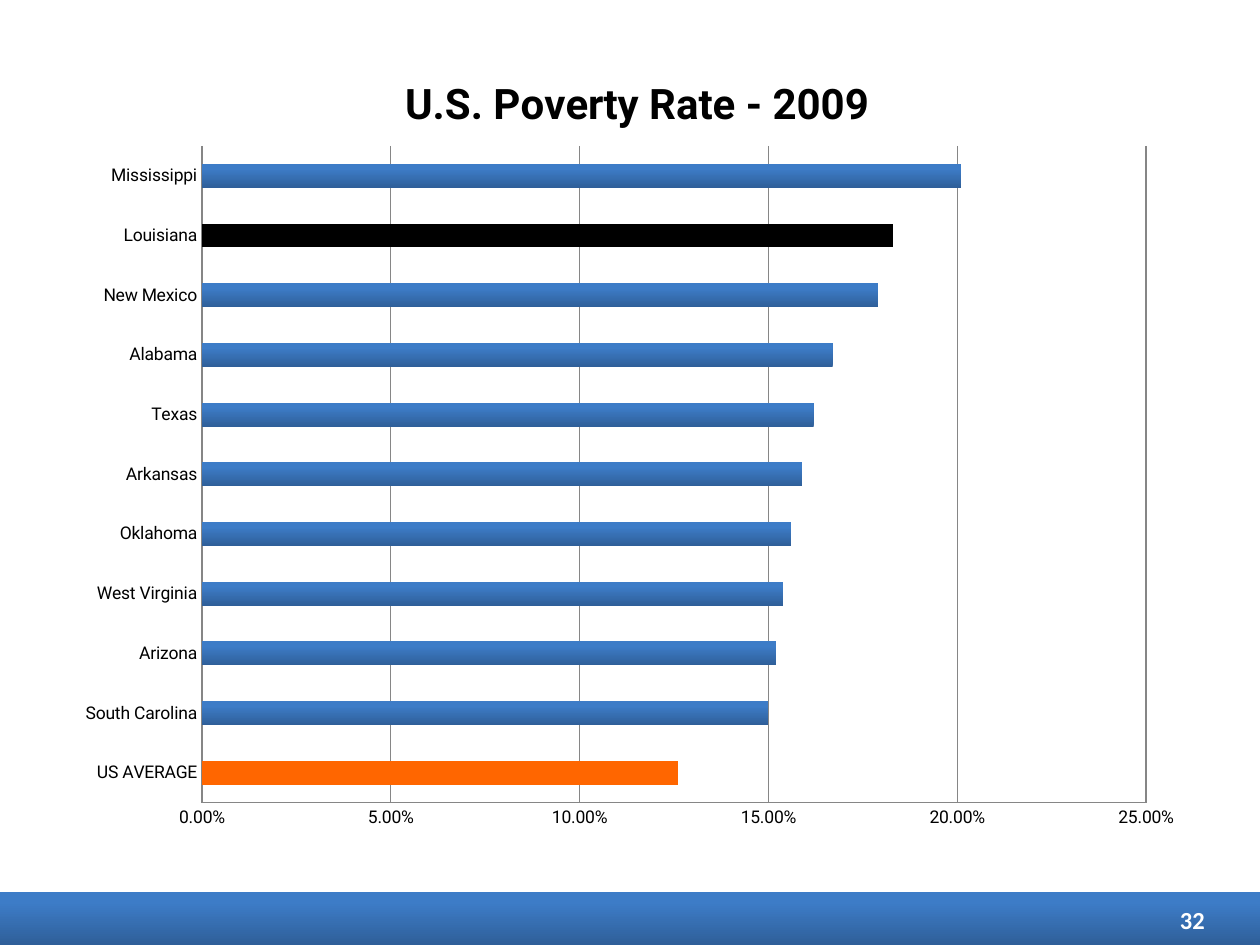
"""Build a slide with a bar chart of 2009 poverty rates by state."""
from lxml.etree import SubElement
from pptx import Presentation
from pptx.chart.data import CategoryChartData
from pptx.dml.color import RGBColor
from pptx.enum.chart import XL_CHART_TYPE as ChartType, XL_TICK_MARK as TickMark
from pptx.enum.shapes import MSO_SHAPE as Shape
from pptx.enum.text import MSO_ANCHOR as Anchor, PP_ALIGN as Align
from pptx.oxml.ns import qn
from pptx.util import Inches, Pt

TITLE = "U.S. Poverty Rate - 2009"
PAGE_NUMBER = "32"
RATES = {
    "US AVERAGE": 0.126, "South Carolina": 0.15, "Arizona": 0.152,
    "West Virginia": 0.154, "Oklahoma": 0.156, "Arkansas": 0.159,
    "Texas": 0.162, "Alabama": 0.167, "New Mexico": 0.179,
    "Louisiana": 0.183, "Mississippi": 0.201,
}
HIGHLIGHTS = {"US AVERAGE": "FF6600", "Louisiana": "000000"}
BLUES = [(0, "2F5F99"), (0.8, "3D7CC7")]
AXIS_GREY = "868686"
TITLE_PLACE = {"xMode": "edge", "yMode": "edge", "x": 0.295, "y": 0.044}
PLOT_PLACE = {"layoutTarget": "inner", "xMode": "edge", "yMode": "edge",
              "x": 0.1226, "y": 0.141, "w": 0.8325, "h": 0.808}


def color(value):
    return RGBColor.from_string(value)


def apply(target, values):
    for name, value in values.items():
        setattr(target, name, value)


def set_font(font, shade, **values):
    apply(font, values)
    font.color.rgb = color(shade)


def fill_blue(fill):
    fill.gradient()
    fill.gradient_angle = 90
    for stop, (position, shade) in zip(fill.gradient_stops, BLUES):
        stop.position = position
        stop.color.rgb = color(shade)


def place(parent, index, values):
    for old in parent.findall(qn("c:layout")):
        parent.remove(old)
    layout = SubElement(parent, qn("c:layout"))
    parent.insert(index, layout)
    manual = SubElement(layout, qn("c:manualLayout"))
    for name, value in values.items():
        SubElement(manual, qn(f"c:{name}")).set("val", str(value))


def add_footer(page):
    band = page.shapes.add_shape(
        Shape.RECTANGLE, Inches(0), Inches(7.08), Inches(10), Inches(0.42))
    band.shadow.inherit = False
    band.line.fill.background()
    fill_blue(band.fill)
    box = page.shapes.add_textbox(
        Inches(7.33), Inches(7.1), Inches(2.33), Inches(0.4))
    apply(box.text_frame, {"word_wrap": True, "vertical_anchor": Anchor.MIDDLE})
    para = box.text_frame.paragraphs[0]
    para.alignment = Align.RIGHT
    span = para.add_run()
    span.text = PAGE_NUMBER
    set_font(span.font, "FFFFFF", name="Calibri", size=Pt(14), bold=True)


def add_rates(page):
    data = CategoryChartData(number_format="0.00%")
    data.categories = list(RATES)
    data.add_series("Series 1", list(RATES.values()))
    chart = page.shapes.add_chart(
        ChartType.BAR_CLUSTERED, Inches(0.5), Inches(0.25), Inches(9),
        Inches(6.45), data).chart
    set_font(chart.font, "000000", name="Roboto", size=Pt(10))
    apply(chart, {"has_legend": False, "has_title": True})

    para = chart.chart_title.text_frame.paragraphs[0]
    span = para.add_run()
    span.text = TITLE
    set_font(span.font, "000000", name="Roboto", size=Pt(24), bold=True)
    chart_root = chart.element
    place(chart_root.find(f".//{qn('c:title')}"), 1, TITLE_PLACE)
    place(chart_root.find(f".//{qn('c:plotArea')}"), 0, PLOT_PLACE)

    states, scale = chart.category_axis, chart.value_axis
    for axis in (states, scale):
        apply(axis, {"major_tick_mark": TickMark.NONE,
                     "minor_tick_mark": TickMark.NONE})
    apply(scale, {"minimum_scale": 0, "maximum_scale": 0.25,
                  "major_unit": 0.05, "has_major_gridlines": True})
    apply(scale.tick_labels, {"number_format": "0.00%",
                              "number_format_is_linked": False})
    for line in (states.format.line, scale.format.line,
                 scale.major_gridlines.format.line):
        line.color.rgb = color(AXIS_GREY)
        line.width = Pt(0.75)

    plot = chart.plots[0]
    apply(plot, {"gap_width": 150, "vary_by_categories": False})
    series = plot.series[0]
    series.invert_if_negative = False
    fill_blue(series.format.fill)
    for index, state in enumerate(RATES):
        if state in HIGHLIGHTS:
            fill = series.points[index].format.fill
            fill.solid()
            fill.fore_color.rgb = color(HIGHLIGHTS[state])


def main():
    deck = Presentation()
    apply(deck, {"slide_width": Inches(10), "slide_height": Inches(7.5)})
    page = deck.slides.add_slide(deck.slide_layouts[6])
    add_footer(page)
    add_rates(page)
    deck.save("out.pptx")


if __name__ == "__main__":
    main()
